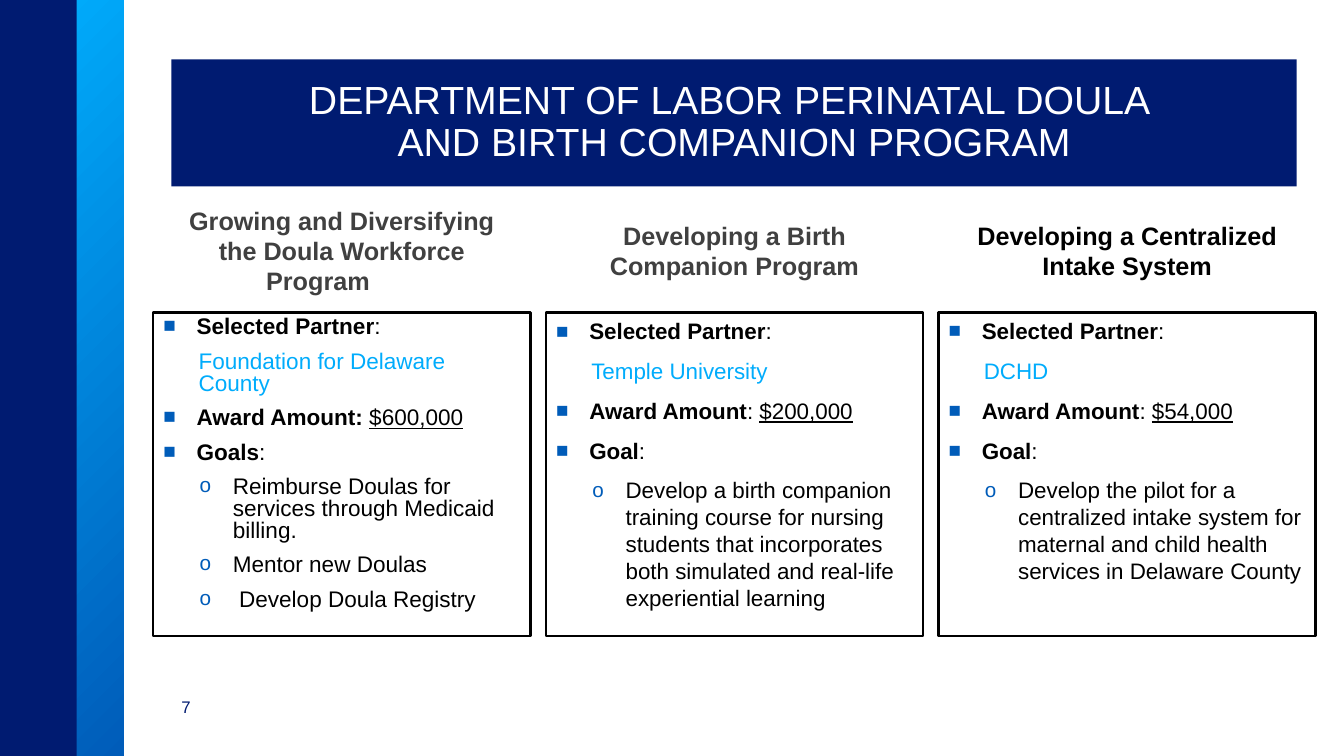
from lxml.etree import SubElement
from pptx import Presentation
from pptx.dml.color import RGBColor
from pptx.enum.shapes import MSO_SHAPE
from pptx.enum.text import MSO_ANCHOR, MSO_AUTO_SIZE, PP_ALIGN
from pptx.oxml.ns import qn
from pptx.util import Inches, Pt

NAVY, BLUE, SKY = "001B71", "005CB9", "00ACFC"
BLACK, WHITE, GRAY = "000000", "FFFFFF", "404040"

TITLE = "DEPARTMENT OF LABOR PERINATAL DOULA \vAND BIRTH COMPANION PROGRAM"
PAGE_NUMBER = "7"
# A body row is its kind, then runs of text with their style.
PARTNER = ("item", ("Selected Partner", "bold"), (":", ""))
COLUMNS = [
    dict(
        heading="Growing and Diversifying the Doula Workforce Program\t",
        color=GRAY, size=16.1, spacing=0.8,
        rows=[
            PARTNER,
            ("name", ("Foundation for Delaware County", "")),
            ("item", ("Award Amount: ", "bold"), ("$600,000", "underline")),
            ("item", ("Goals", "bold"), (":", "")),
            ("goal", ("Reimburse Doulas for services through Medicaid billing.", "")),
            ("goal", ("Mentor new Doulas", "")),
            ("goal", (" Develop Doula Registry", "")),
        ],
    ),
    dict(
        heading="Developing a Birth Companion Program",
        color=GRAY, size=16, spacing=1.0,
        rows=[
            PARTNER,
            ("name", ("Temple University", "")),
            ("item", ("Award Amount", "bold"), (": ", ""), ("$200,000", "underline")),
            ("item", ("Goal", "bold"), (":", "")),
            ("goal", ("Develop a birth companion training course for nursing students "
                      "that incorporates both simulated and real-life experiential learning", "")),
        ],
    ),
    dict(
        heading="Developing a Centralized Intake System",
        color=BLACK, size=16, spacing=1.0,
        rows=[
            PARTNER,
            ("name", ("DCHD", "")),
            ("item", ("Award Amount", "bold"), (": ", ""), ("$54,000", "underline")),
            ("item", ("Goal", "bold"), (":", "")),
            ("goal", ("Develop the pilot for a centralized intake system for maternal "
                      "and child health services in Delaware County", "")),
        ],
    ),
]
# kind: level, left margin, first-line indent, bullet, text colour
KINDS = {
    "item": (0, 0.33, -0.33, "■", BLACK),
    "name": (1, 0.35, 0, None, SKY),
    "goal": (1, 0.69, -0.33, "o", BLACK),
}

SLIDE_WIDTH, SLIDE_HEIGHT = 13.33, 7.5
GRID_LEFT, COLUMN_WIDTH, COLUMN_GAP = 1.52, 3.74, 0.155
HEADING_WIDTH, HEADING_TOP, HEADING_HEIGHT = 3.32, 2.18, 0.61
BODY_TOP, BODY_HEIGHT = 3.1, 3.21


def rgb(color):
    return RGBColor.from_string(color)


def place(shape, left, top, width, height):
    values = dict(left=left, top=top, width=width, height=height)
    for name, value in values.items():
        setattr(shape, name, Inches(value))


def set_frame(shape, anchor):
    values = dict(word_wrap=True, auto_size=MSO_AUTO_SIZE.NONE, vertical_anchor=anchor)
    for name, value in values.items():
        setattr(shape.text_frame, name, value)


def fill_solid(shape, color):
    shape.fill.solid()
    shape.fill.fore_color.rgb = rgb(color)


def set_font(font, color, size, **styles):
    values = dict(name="Arial", size=Pt(size), bold=False) | styles
    for name, value in values.items():
        setattr(font, name, value)
    font.color.rgb = rgb(color)


def write_line(shape, text, color, size, anchor, alignment, **styles):
    """Fill a shape with one paragraph in a single style."""
    set_frame(shape, anchor)
    paragraph = shape.text_frame.paragraphs[0]
    paragraph.text = text
    paragraph.alignment = alignment
    paragraph.space_before = Pt(0)
    for run in paragraph.runs:
        set_font(run.font, color, size, **styles)
    return paragraph


def set_bullet(paragraph, left, indent, character):
    properties = paragraph._p.get_or_add_pPr()
    properties.set("marL", str(Inches(left)))
    properties.set("indent", str(Inches(indent)))
    if character is None:
        SubElement(properties, qn("a:buNone"))
        return
    SubElement(SubElement(properties, qn("a:buClr")), qn("a:srgbClr"), val=BLUE)
    SubElement(properties, qn("a:buSzPct"), val="92000")
    SubElement(properties, qn("a:buFont"), typeface="Arial")
    SubElement(properties, qn("a:buChar"), char=character)


def write_body(shape, rows, size, spacing):
    set_frame(shape, MSO_ANCHOR.TOP)
    frame = shape.text_frame
    for index, (kind, *runs) in enumerate(rows):
        level, left, indent, character, color = KINDS[kind]
        paragraph = frame.add_paragraph() if index else frame.paragraphs[0]
        set_bullet(paragraph, left, indent, character)
        values = dict(level=level, line_spacing=spacing, alignment=PP_ALIGN.LEFT,
                      space_before=Pt(3.2 if index else 0), space_after=Pt(6))
        for name, value in values.items():
            setattr(paragraph, name, value)
        for text, style in runs:
            run = paragraph.add_run()
            run.text = text
            set_font(run.font, color, size, **({style: True} if style else {}))


def add_band(slide, left):
    band = slide.shapes.add_shape(MSO_SHAPE.RECTANGLE, Inches(left), 0,
                                  Inches(0.76), Inches(SLIDE_HEIGHT))
    band.shadow.inherit = False
    band.line.fill.background()
    return band


def add_text_area(slide):
    return slide.shapes.add_textbox(0, 0, 0, 0)


def main():
    presentation = Presentation()
    presentation.slide_width = Inches(SLIDE_WIDTH)
    presentation.slide_height = Inches(SLIDE_HEIGHT)
    slide = presentation.slides.add_slide(presentation.slide_layouts.get_by_name("Comparison"))
    title, *text_areas = slide.placeholders

    gradient = add_band(slide, 0.47).fill
    gradient.gradient()
    gradient.gradient_angle = 135
    for stop, color in zip(gradient.gradient_stops, (BLUE, SKY)):
        stop.color.rgb = rgb(color)
    fill_solid(add_band(slide, 0), NAVY)

    place(title, 1.7, 0.59, 11.16, 1.26)
    fill_solid(title, NAVY)
    heading = write_line(title, TITLE, WHITE, 28, MSO_ANCHOR.MIDDLE, PP_ALIGN.CENTER)
    heading.line_spacing = 0.9

    text_areas += [add_text_area(slide), add_text_area(slide)]
    for index, (column, label, body) in enumerate(zip(COLUMNS, text_areas[::2], text_areas[1::2])):
        left = GRID_LEFT + index * (COLUMN_WIDTH + COLUMN_GAP)
        place(label, left + (COLUMN_WIDTH - HEADING_WIDTH) / 2, HEADING_TOP,
              HEADING_WIDTH, HEADING_HEIGHT)
        write_line(label, column["heading"], column["color"], 18,
                   MSO_ANCHOR.MIDDLE, PP_ALIGN.CENTER, bold=True)
        place(body, left, BODY_TOP, COLUMN_WIDTH, BODY_HEIGHT)
        fill_solid(body, WHITE)
        body.line.color.rgb = rgb(BLACK)
        body.line.width = Pt(1.75)
        write_body(body, column["rows"], column["size"], column["spacing"])

    page = add_text_area(slide)
    place(page, 1.7, 6.86, 0.55, 0.4)
    write_line(page, PAGE_NUMBER, NAVY, 12, MSO_ANCHOR.TOP, PP_ALIGN.LEFT)

    presentation.save("out.pptx")


if __name__ == "__main__":
    main()
